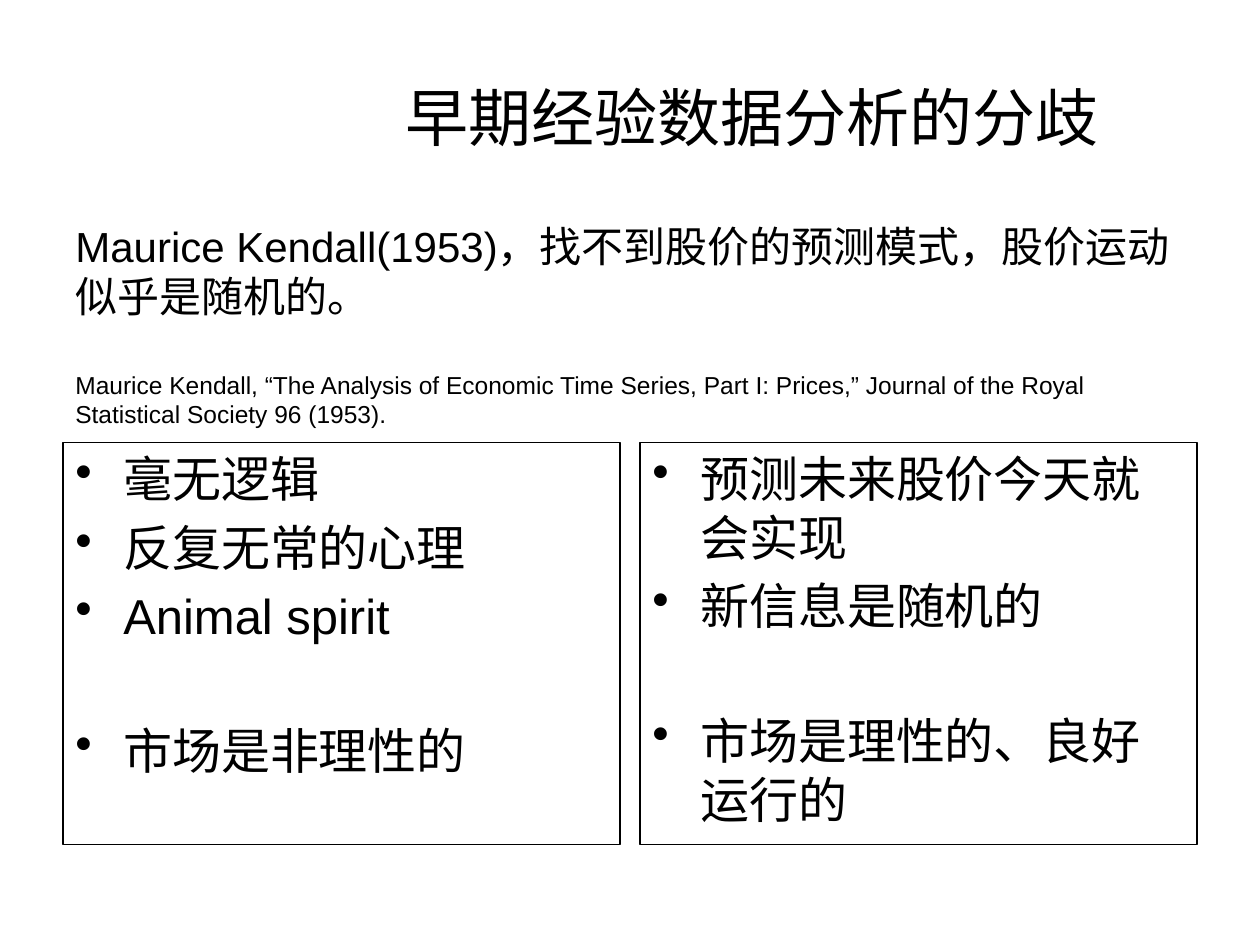
import dataclasses

import pptx
import pptx.dml.color
import pptx.enum.shapes
import pptx.enum.text
import pptx.util
from lxml import etree
from pptx.util import Inches


@dataclasses.dataclass(frozen=True)
class Theme:
    font: str = "Arial"
    ink: pptx.dml.color.RGBColor = pptx.dml.color.RGBColor(0, 0, 0)
    title: int = 36
    argument: int = 28
    finding: int = 24
    citation: int = 14
    border: float = 0.75
    item_gap: float = 5.6
    conclusion_gap: float = 43.4
    citation_gap: float = 27.6


THEME = Theme()
MARGIN = 0.5
VIEW_WIDTH = 4.42
VIEW_TOP = 3.51
VIEW_HEIGHT = 3.19
VIEW_LEFTS = (MARGIN, 10 - MARGIN - VIEW_WIDTH)
HANGING_INDENT = Inches(0.38)

VIEWS = (
    (("毫无逻辑", "反复无常的心理", "Animal spirit"), "市场是非理性的"),
    (("预测未来股价今天就会实现", "新信息是随机的"), "市场是理性的、良好运行的"),
)


def add_run(paragraph, text, size):
    run = paragraph.add_run()
    run.text = text
    run.font.name = THEME.font
    run.font.size = pptx.util.Pt(size)
    run.font.color.rgb = THEME.ink


def add_bullet(paragraph):
    properties = paragraph._p.get_or_add_pPr()
    properties.set("marL", str(HANGING_INDENT))
    properties.set("indent", str(-HANGING_INDENT))
    bullet = etree.SubElement(properties, pptx.oxml.ns.qn("a:buChar"))
    bullet.set("char", "•")


def add_text_box(slide, left, top, width, height):
    box = slide.shapes.add_textbox(
        Inches(left), Inches(top), Inches(width), Inches(height))
    box.text_frame.word_wrap = True
    return box.text_frame


def add_title(slide, text):
    frame = add_text_box(slide, MARGIN, 0.3, 9, 1.25)
    frame.margin_left = Inches(2.03)
    frame.vertical_anchor = pptx.enum.text.MSO_ANCHOR.MIDDLE
    heading = frame.paragraphs[0]
    heading.alignment = pptx.enum.text.PP_ALIGN.CENTER
    add_run(heading, text, THEME.title)


def add_evidence(slide, finding, citation):
    frame = add_text_box(slide, MARGIN, 1.7, 9, 1.78)
    add_run(frame.paragraphs[0], finding, THEME.finding)
    reference = frame.add_paragraph()
    reference.space_before = pptx.util.Pt(THEME.citation_gap)
    add_run(reference, citation, THEME.citation)


def add_view(slide, left, arguments, conclusion):
    panel = slide.shapes.add_shape(
        pptx.enum.shapes.MSO_SHAPE.RECTANGLE,
        Inches(left), Inches(VIEW_TOP), Inches(VIEW_WIDTH), Inches(VIEW_HEIGHT))
    panel.shadow.inherit = False
    panel.fill.background()
    panel.line.color.rgb = THEME.ink
    panel.line.width = pptx.util.Pt(THEME.border)
    frame = panel.text_frame
    frame.word_wrap = True
    frame.vertical_anchor = pptx.enum.text.MSO_ANCHOR.TOP
    gaps = [0] + [THEME.item_gap] * (len(arguments) - 1) + [THEME.conclusion_gap]
    for index, (point, gap) in enumerate(zip((*arguments, conclusion), gaps)):
        item = frame.add_paragraph() if index else frame.paragraphs[0]
        add_bullet(item)
        item.alignment = pptx.enum.text.PP_ALIGN.LEFT
        item.space_before = pptx.util.Pt(gap)
        add_run(item, point, THEME.argument)


def main():
    presentation = pptx.Presentation()
    presentation.slide_width = Inches(10)
    presentation.slide_height = Inches(7.5)
    slide = presentation.slides.add_slide(presentation.slide_layouts[6])
    add_title(slide, "早期经验数据分析的分歧")
    for left, (arguments, conclusion) in zip(VIEW_LEFTS, VIEWS):
        add_view(slide, left, arguments, conclusion)
    add_evidence(
        slide,
        "Maurice Kendall(1953)，找不到股价的预测模式，股价运动似乎是随机的。",
        "Maurice Kendall, “The Analysis of Economic Time Series, Part I: Prices,” "
        "Journal of the Royal Statistical Society 96 (1953).")
    presentation.save("out.pptx")


if __name__ == "__main__":
    main()
